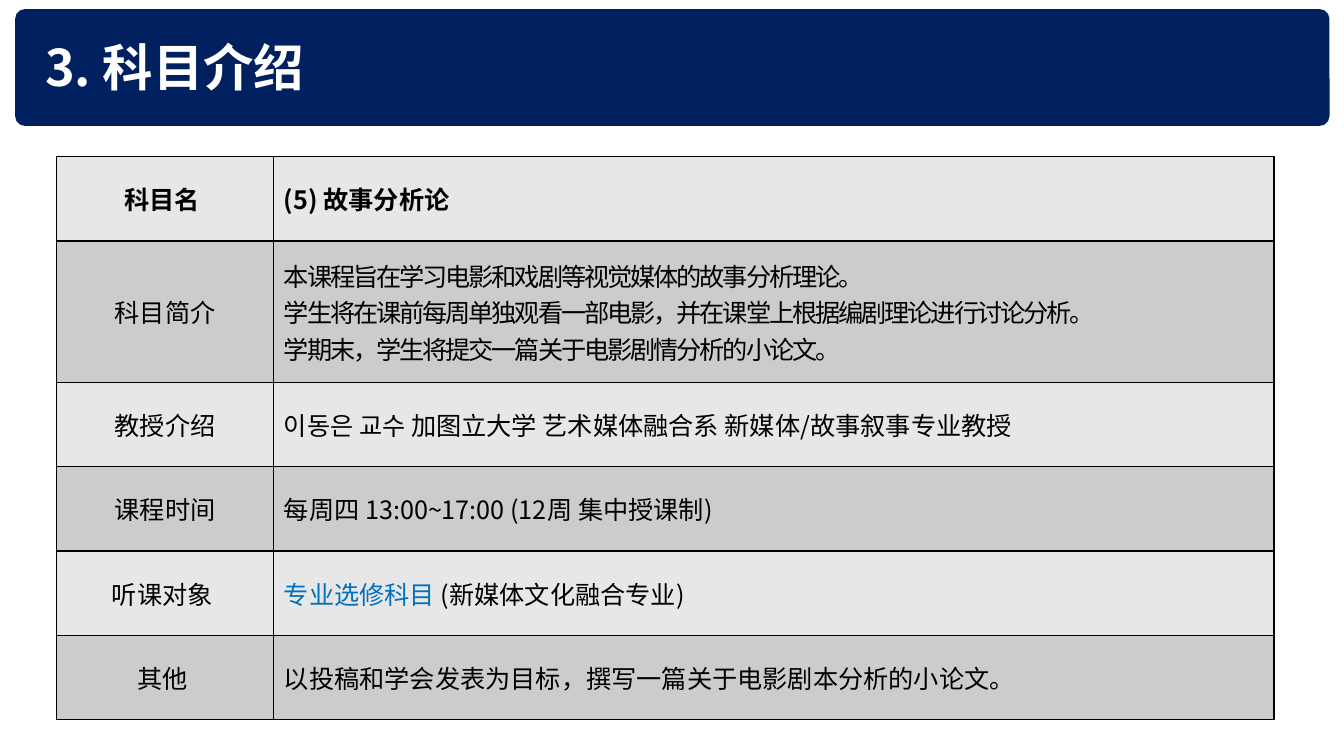
from lxml import etree
from pptx import Presentation
from pptx.dml.color import RGBColor
from pptx.enum.shapes import MSO_SHAPE
from pptx.enum.text import MSO_ANCHOR, MSO_AUTO_SIZE, PP_ALIGN
from pptx.oxml.ns import qn
from pptx.util import Pt

ROUND = MSO_SHAPE.ROUNDED_RECTANGLE
MIDDLE = MSO_ANCHOR.MIDDLE
GROW = MSO_AUTO_SIZE.SHAPE_TO_FIT_TEXT
LEFT, CENTER = PP_ALIGN.LEFT, PP_ALIGN.CENTER

NAVY = RGBColor(0x00, 0x20, 0x60)
WHITE = RGBColor(0xFF, 0xFF, 0xFF)
BLACK = RGBColor(0x00, 0x00, 0x00)
BLUE = RGBColor(0x00, 0x70, 0xC0)
LIGHT = RGBColor(0xE7, 0xE7, 0xE7)
DARK = RGBColor(0xCC, 0xCC, 0xCC)
FONT = "Noto Sans CJK KR"

ROWS = [
    ("科目名 ", "(5) 故事分析论"),
    ("科目简介", "本课程旨在学习电影和戏剧等视觉媒体的故事分析理论。\n"
     "学生将在课前每周单独观看一部电影，并在课堂上根据编剧理论进行讨论分析。\n"
     "学期末，学生将提交一篇关于电影剧情分析的小论文。"),
    ("教授介绍", "이동은 교수 加图立大学 艺术媒体融合系 新媒体/故事叙事专业教授"),
    ("课程时间", "每周四 13:00~17:00 (12周 集中授课制)"),
    ("听课对象 ", "专业选修科目 "),
    ("其他 ", "以投稿和学会发表为目标，撰写一篇关于电影剧本分析的小论文。"),
]
INTRO, TARGET = 1, 4


def style(run, size, color, bold=False):
    font = run.font
    font.size, font.bold, font.name = Pt(size), bold, FONT
    font.color.rgb = color
    etree.SubElement(font._element, qn("a:ea"), typeface=FONT)


def border(cell):
    props = cell._tc.get_or_add_tcPr()
    for spot, side in enumerate(("lnL", "lnR", "lnT", "lnB")):
        line = etree.Element(qn("a:" + side), w=str(Pt(1)))
        fill = etree.SubElement(line, qn("a:solidFill"))
        etree.SubElement(fill, qn("a:srgbClr"), val=str(BLACK))
        props.insert(spot, line)


deck = Presentation()
deck.slide_width, deck.slide_height = Pt(960), Pt(540)
slide = deck.slides.add_slide(deck.slide_layouts[6])
shapes = slide.shapes

# Title bar
bar = shapes.add_shape(ROUND, Pt(10.8), Pt(6.5), Pt(938.9), Pt(83.5))
bar.adjustments[0] = 0.085
bar.shadow.inherit = False
bar.fill.solid()
bar.fill.fore_color.rgb = NAVY
bar.line.fill.background()

# Title
title = shapes.add_textbox(Pt(25.2), Pt(22.3), Pt(844.6), Pt(51.1))
frame = title.text_frame
frame.word_wrap = True
frame.auto_size = GROW
frame.text = "3. 科目介绍"
style(frame.paragraphs[0].runs[0], 36, WHITE, True)

# Course table
grid = shapes.add_table(len(ROWS), 2, Pt(40.3), Pt(112), Pt(869.8), Pt(402)).table
grid.columns[0].width, grid.columns[1].width = Pt(155.3), Pt(714.5)
for r, texts in enumerate(ROWS):
    grid.rows[r].height = Pt(101 if r == INTRO else 60.2)
    for c, text in enumerate(texts):
        cell = grid.cell(r, c)
        cell.vertical_anchor = MIDDLE
        cell.fill.solid()
        cell.fill.fore_color.rgb = DARK if r % 2 else LIGHT
        border(cell)
        cell.text_frame.text = text
        for para in cell.text_frame.paragraphs:
            para.alignment = LEFT if c else CENTER
            style(para.runs[0], 18, BLACK, r == 0)
            if c and r == INTRO:
                para.runs[0].font._element.set("spc", "-150")

# Course type in blue, followed by the major
para = grid.cell(TARGET, 1).text_frame.paragraphs[0]
para.runs[0].font.color.rgb = BLUE
major = para.add_run()
major.text = "(新媒体文化融合专业)"
style(major, 18, BLACK)

deck.save("out.pptx")
